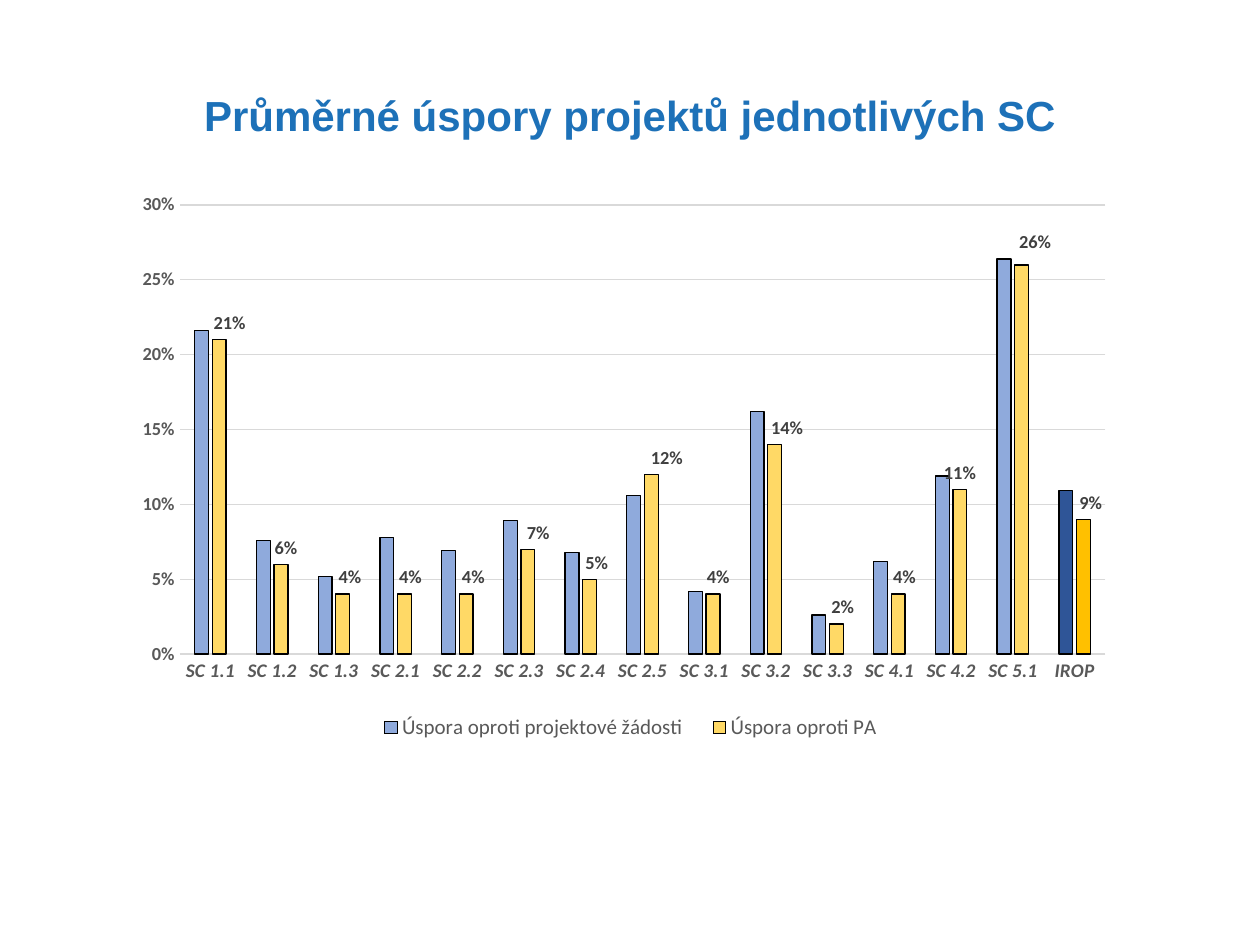
import pptx
import pptx.chart.data
import pptx.dml.color
import pptx.enum.chart
import pptx.enum.text
import pptx.oxml
import pptx.oxml.ns
import pptx.util

COLORS = {"title": "1D71B8", "axis": "595959", "grid": "D9D9D9", "label": "404040",
          "outline": "000000", "request": "8FAADC", "request_total": "2F5597",
          "act": "FFD966", "act_total": "FFC000"}


def style(font, size, color, bold=False, name="Calibri"):
    font.size, font.bold, font.name = pptx.util.Pt(size), bold, name
    font.color.rgb = pptx.dml.color.RGBColor.from_string(COLORS[color])


def manual_layout(**parts):
    tags = "".join(f'<c:{tag} val="{value}"/>' for tag, value in parts.items())
    return pptx.oxml.parse_xml(f'<c:layout {pptx.oxml.ns.nsdecls("c")}>'
                               f'<c:manualLayout>{tags}</c:manualLayout></c:layout>')


deck = pptx.Presentation()
deck.slide_width, deck.slide_height = pptx.util.Inches(10), pptx.util.Inches(7.5)
W, H = deck.slide_width, deck.slide_height
slide = deck.slides.add_slide(deck.slide_layouts[5])

# Title
title = slide.shapes.title
title.left, title.top = int(W * 0.07), int(H * 0.07)
title.width, title.height = int(W * 0.86), int(H * 0.11)
title.text_frame.text = "Průměrné úspory projektů jednotlivých SC"
title.text_frame.vertical_anchor = pptx.enum.text.MSO_ANCHOR.MIDDLE
heading = title.text_frame.paragraphs[0]
heading.alignment = pptx.enum.text.PP_ALIGN.CENTER
heading.line_spacing = 0.9
style(heading.font, 24, "title", True, "Arial")

# Savings per specific objective (SC), with the programme total last
goals = [f"SC {goal}" for goal in ("1.1", "1.2", "1.3", "2.1", "2.2", "2.3", "2.4", "2.5",
                                   "3.1", "3.2", "3.3", "4.1", "4.2", "5.1")] + ["IROP"]
savings = pptx.chart.data.CategoryChartData(number_format="0%")
savings.categories = goals
savings.add_series("Úspora oproti projektové žádosti",
                   [0.216, 0.076, 0.052, 0.078, 0.069, 0.089, 0.068, 0.106,
                    0.042, 0.162, 0.026, 0.062, 0.119, 0.264, 0.109])
savings.add_series("Úspora oproti PA",
                   [0.21, 0.06, 0.04, 0.04, 0.04, 0.07, 0.05, 0.12,
                    0.04, 0.14, 0.02, 0.04, 0.11, 0.26, 0.09])
chart = slide.shapes.add_chart(pptx.enum.chart.XL_CHART_TYPE.COLUMN_CLUSTERED,
                               int(W * 0.089), int(H * 0.19), int(W * 0.823),
                               int(H * 0.627), savings).chart
chart.has_title = False
style(chart.font, 10, "outline")
plot = chart.plots[0]
plot.gap_width, plot.overlap, plot.vary_by_categories = 219, -27, False
plot_area = chart._chartSpace.chart.plotArea
for old_layout in plot_area.findall(pptx.oxml.ns.qn("c:layout")):
    plot_area.remove(old_layout)
plot_area.insert(0, manual_layout(layoutTarget="inner", xMode="edge", yMode="edge",
                                  x=0.065, y=0.043, w=0.893, h=0.758))

# Axes
no_tick = pptx.enum.chart.XL_TICK_MARK.NONE
for axis, size in ((chart.category_axis, 11), (chart.value_axis, 10.5)):
    axis.major_tick_mark = axis.minor_tick_mark = no_tick
    style(axis.tick_labels.font, size, "axis", True)
chart.category_axis.tick_labels.font.italic = True
percent = chart.value_axis
percent.minimum_scale, percent.maximum_scale, percent.major_unit = 0, 0.3, 0.05
percent.tick_labels.number_format = "0%"
percent.tick_labels.number_format_is_linked = False
percent.format.line.fill.background()
percent.has_major_gridlines = True
for line in (chart.category_axis.format.line, percent.major_gridlines.format.line):
    line.color.rgb = pptx.dml.color.RGBColor.from_string(COLORS["grid"])
    line.width = pptx.util.Pt(0.75)

# Bars, with a stronger colour for the total
for bars, name in zip(plot.series, ("request", "act")):
    total = bars.points[len(goals) - 1]
    for part, color in ((bars, name), (total, f"{name}_total")):
        part.format.fill.solid()
        part.format.fill.fore_color.rgb = pptx.dml.color.RGBColor.from_string(COLORS[color])
        part.format.line.color.rgb = pptx.dml.color.RGBColor.from_string(COLORS["outline"])
        part.format.line.width = pptx.util.Pt(0.75)
    bars.invert_if_negative = False

# Value labels, nudged right of their bars
act = plot.series[1]
above = pptx.enum.chart.XL_LABEL_POSITION.OUTSIDE_END
act.data_labels.show_value = True
act.data_labels.number_format = "0%"
act.data_labels.number_format_is_linked = False
act.data_labels.position = above
style(act.data_labels.font, 10.5, "label", True)
shifts = [0.01, 0.005, 0.007, 0.006, 0.007, 0.01, 0.007, 0.015,
          0.005, 0.012, 0.006, 0.006, 0, 0.013, 0.007]
for index, shift in enumerate(shifts):
    if shift:
        label = act.points[index].data_label
        style(label.font, 10.5, "label", True)
        label.position = above
        label._dLbl.insert(1, manual_layout(x=shift, y=-0.01 if goals[index] == "SC 5.1" else 0))

# Legend below the plot
chart.has_legend = True
legend = chart.legend
legend.position = pptx.enum.chart.XL_LEGEND_POSITION.RIGHT
legend.include_in_layout = False
style(legend.font, 12, "axis")
for old_layout in legend._element.findall(pptx.oxml.ns.qn("c:layout")):
    legend._element.remove(old_layout)
legend._element.insert(1, manual_layout(xMode="edge", yMode="edge",
                                        x=0.24, y=0.89, w=0.52, h=0.07))

deck.save("out.pptx")
